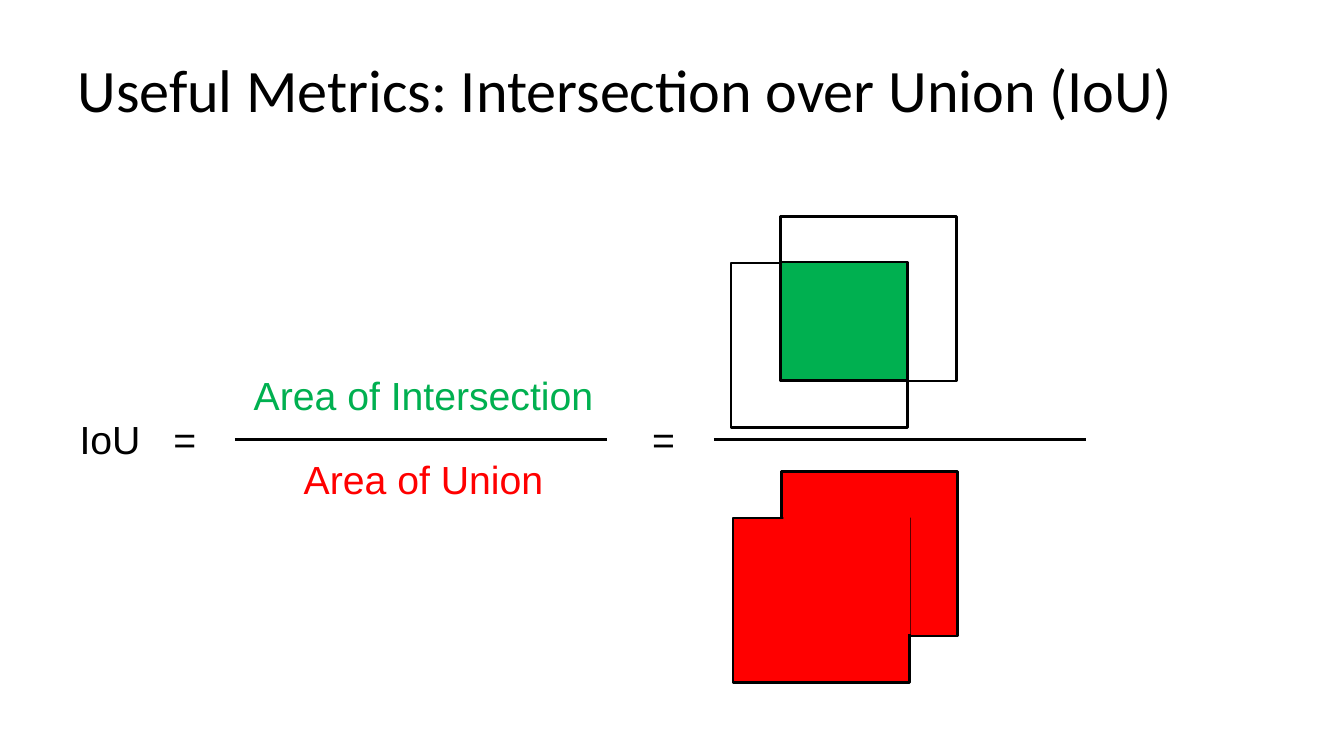
from dataclasses import dataclass
from typing import Optional

from lxml import etree
from pptx import Presentation
from pptx.dml.color import RGBColor
from pptx.enum import shapes, text
from pptx.oxml import ns
from pptx.util import Inches, Pt

BLACK = RGBColor(0x00, 0x00, 0x00)
GREEN = RGBColor(0x00, 0xB0, 0x50)
RED = RGBColor(0xFF, 0x00, 0x00)

BAR_Y = 4.36
BAR_WIDTH = 3.69
BOX_SIZE = (1.75, 1.63)
OVERLAP_SIZE = (1.26, 1.17)


@dataclass
class Label:
    content: str
    left: float
    top: float
    width: float
    height: float = 0.57
    color: RGBColor = BLACK
    align: text.PP_ALIGN = text.PP_ALIGN.LEFT
    anchor: text.MSO_ANCHOR = text.MSO_ANCHOR.TOP
    font: str = "Arial"
    size: int = 28
    tabs: tuple[float, ...] = ()


@dataclass
class Box:
    left: float
    top: float
    size: tuple[float, float] = BOX_SIZE
    fill: Optional[RGBColor] = None
    outlined: bool = True


LABELS = [
    Label("IoU\t=\t=", 0.69, 4.07, 7.31, tabs=(0.93, 5.68)),
    Label("Useful Metrics: Intersection over Union (IoU)", 0.67, 0.25, 12.42, 1.25,
          anchor=text.MSO_ANCHOR.MIDDLE, font="Calibri", size=43),
    Label("Area of Intersection", 2.4, 3.63, 3.6,
          color=GREEN, align=text.PP_ALIGN.CENTER),
    Label("Area of Union", 2.4, 4.47, 3.6,
          color=RED, align=text.PP_ALIGN.CENTER),
]

FRACTION_BARS = [2.33, 7.08]

BOXES = [
    Box(7.74, 2.15),
    Box(7.25, 2.61),
    Box(7.74, 2.6, OVERLAP_SIZE, GREEN),
    Box(7.75, 4.68, fill=RED),
    Box(7.27, 5.14, fill=RED),
    Box(7.77, 5.12, OVERLAP_SIZE, RED, outlined=False),
]


def add_label(s, label: Label) -> None:
    sp = s.shapes.add_textbox(Inches(label.left), Inches(label.top),
                              Inches(label.width), Inches(label.height))
    tf = sp.text_frame
    tf.word_wrap = True
    tf.vertical_anchor = label.anchor
    p = tf.paragraphs[0]
    p.text = label.content
    p.alignment = label.align
    if label.tabs:
        tab_list = etree.SubElement(p._p.get_or_add_pPr(), ns.qn("a:tabLst"))
        for position in label.tabs:
            etree.SubElement(tab_list, ns.qn("a:tab"),
                             pos=str(Inches(position)), algn="l")
    p.font.name = label.font
    p.font.size = Pt(label.size)
    p.font.color.rgb = label.color


def add_fraction_bar(s, left: float) -> None:
    bar = s.shapes.add_connector(shapes.MSO_CONNECTOR.STRAIGHT,
                                 Inches(left), Inches(BAR_Y),
                                 Inches(left + BAR_WIDTH), Inches(BAR_Y))
    bar.line.color.rgb = BLACK
    bar.line.width = Pt(1.5)
    etree.SubElement(bar._element.spPr, ns.qn("a:effectLst"))


def add_box(s, box: Box) -> None:
    width, height = box.size
    sp = s.shapes.add_shape(shapes.MSO_SHAPE.RECTANGLE,
                            Inches(box.left), Inches(box.top),
                            Inches(width), Inches(height))
    sp.shadow.inherit = False
    if box.fill is None:
        sp.fill.background()
    else:
        sp.fill.solid()
        sp.fill.fore_color.rgb = box.fill
    if box.outlined:
        sp.line.color.rgb = BLACK
        sp.line.width = Pt(2)
    else:
        sp.line.fill.background()


def main() -> None:
    prs = Presentation()
    prs.slide_width = Inches(13.33)
    prs.slide_height = Inches(7.5)
    s = prs.slides.add_slide(prs.slide_layouts[6])
    for label in LABELS:
        add_label(s, label)
    for left in FRACTION_BARS:
        add_fraction_bar(s, left)
    for box in BOXES:
        add_box(s, box)
    prs.save("out.pptx")


if __name__ == "__main__":
    main()
